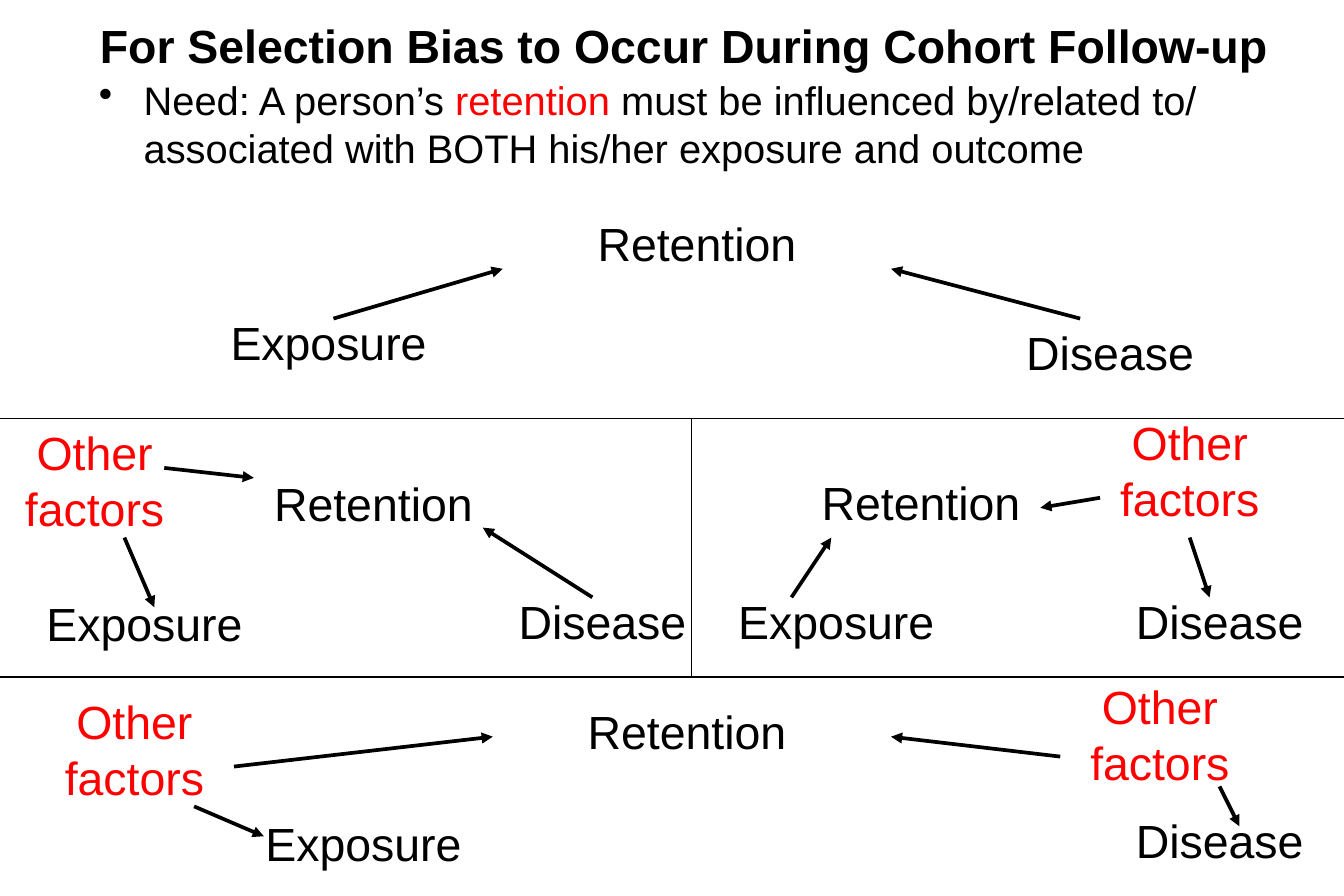
"""Build the slide on selection bias during cohort follow-up."""
from pptx import Presentation
from pptx.dml.color import RGBColor
from pptx.enum.shapes import MSO_CONNECTOR
from pptx.enum.text import MSO_ANCHOR, MSO_AUTO_SIZE, PP_ALIGN
from pptx.oxml.ns import qn
from pptx.util import Pt
from lxml import etree

STRAIGHT = MSO_CONNECTOR.STRAIGHT
CENTER, LEFT = PP_ALIGN.CENTER, PP_ALIGN.LEFT
TOP, MIDDLE = MSO_ANCHOR.TOP, MSO_ANCHOR.MIDDLE
GROW, FIXED = MSO_AUTO_SIZE.SHAPE_TO_FIT_TEXT, MSO_AUTO_SIZE.NONE

WIDTH, HEIGHT = 810, 540
FONT = "Arial"
COLORS = {"ink": "000000", "accent": "FF0000"}
LABEL_SIZE, BODY_SIZE = 28, 24
LABEL_HEIGHT, FACTORS_HEIGHT = 41, 74
ARROW_WEIGHT, DIVIDER_WEIGHT = 2.25, 0.75
BULLET_INDENT = 27

TITLE = [("For Selection Bias to Occur During Cohort Follow-up", "ink")]
TITLE_BOX = (51, 6, 722, 42)
NEED = [
    ("Need: A person’s ", "ink"),
    ("retention", "accent"),
    (" must be influenced by/related to/ associated with BOTH his/her exposure and outcome", "ink"),
]
NEED_BOX = (52.5, 42, 757.5, 408)

FACTORS = "Other factors"
PANELS = [
    {
        "labels": [("Retention", 279, 126, 282), ("Exposure", 57, 186, 282),
                   ("Disease", 528, 192, 282)],
        "arrows": [(201, 192, 303, 162), (651, 192, 537, 162)],
    },
    {
        "labels": [("Retention", 141, 283, 168), ("Exposure", 9, 355, 156),
                   ("Disease", 303, 354, 120), (FACTORS, -27, 252, 168)],
        "arrows": [(75, 324, 93, 366), (99, 282, 153, 288), (357, 360, 291, 318)],
    },
    {
        "labels": [("Retention", 471, 282, 168), ("Exposure", 429, 354, 150),
                   ("Disease", 675, 354, 120), (FACTORS, 633, 246, 168)],
        "arrows": [(477, 360, 501, 324), (717, 324, 729, 360), (663, 300, 627, 306)],
    },
    {
        "labels": [("Retention", 273, 420, 282), ("Exposure", 141, 487.5, 156),
                   ("Disease", 675, 486, 120), (FACTORS, -3, 414, 168),
                   (FACTORS, 615, 405, 168)],
        "arrows": [(141, 462, 297, 444), (639, 456, 537, 444),
                   (117, 486, 159, 504), (735, 474, 747, 498)],
    },
]
UPPER, LOWER, MIDDLE_X = 252, 408, 417
DIVIDERS = [(0, LOWER, WIDTH, LOWER), (0, UPPER, WIDTH, UPPER),
            (MIDDLE_X, UPPER, MIDDLE_X, LOWER)]


def set_all(target, values):
    for name, value in values.items():
        setattr(target, name, value)


def add_text(parent, place, spans, size, bold=False, align=CENTER, anchor=TOP, fit=FIXED):
    box = parent.add_textbox(*map(Pt, place))
    set_all(box.text_frame, {"word_wrap": True, "auto_size": fit, "vertical_anchor": anchor})
    para = box.text_frame.paragraphs[0]
    para.alignment = align
    for text, color in spans:
        span = para.add_run()
        span.text = text
        set_all(span.font, {"name": FONT, "size": Pt(size), "bold": bold})
        span.font.color.rgb = RGBColor.from_string(COLORS[color])
    return para


def add_bullet(para):
    properties = para._p.get_or_add_pPr()
    properties.set("marL", str(Pt(BULLET_INDENT)))
    properties.set("indent", str(-Pt(BULLET_INDENT)))
    etree.SubElement(properties, qn("a:buChar")).set("char", "•")


def add_line(parent, ends, weight, arrow=False):
    line = parent.add_connector(STRAIGHT, *map(Pt, ends))
    line.line.width = Pt(weight)
    line.line.color.rgb = RGBColor.from_string(COLORS["ink"])
    properties = line._element.spPr
    if arrow:
        etree.SubElement(properties.find(qn("a:ln")), qn("a:tailEnd")).set("type", "triangle")
    etree.SubElement(properties, qn("a:effectLst"))


def add_panel(page, panel):
    shapes = page.shapes.add_group_shape().shapes
    for ends in panel["arrows"]:
        add_line(shapes, ends, ARROW_WEIGHT, arrow=True)
    for text, left, top, width in panel["labels"]:
        is_factors = text == FACTORS
        height = FACTORS_HEIGHT if is_factors else LABEL_HEIGHT
        color = "accent" if is_factors else "ink"
        add_text(shapes, (left, top, width, height), [(text, color)], LABEL_SIZE, fit=GROW)


def main():
    deck = Presentation()
    set_all(deck, {"slide_width": Pt(WIDTH), "slide_height": Pt(HEIGHT)})
    page = deck.slides.add_slide(deck.slide_layouts[6])
    add_bullet(add_text(page.shapes, NEED_BOX, NEED, BODY_SIZE, align=LEFT))
    for panel in PANELS:
        add_panel(page, panel)
    dividers = page.shapes.add_group_shape().shapes
    for ends in DIVIDERS:
        add_line(dividers, ends, DIVIDER_WEIGHT)
    add_text(page.shapes, TITLE_BOX, TITLE, LABEL_SIZE, bold=True, anchor=MIDDLE)
    deck.save("out.pptx")


if __name__ == "__main__":
    main()
